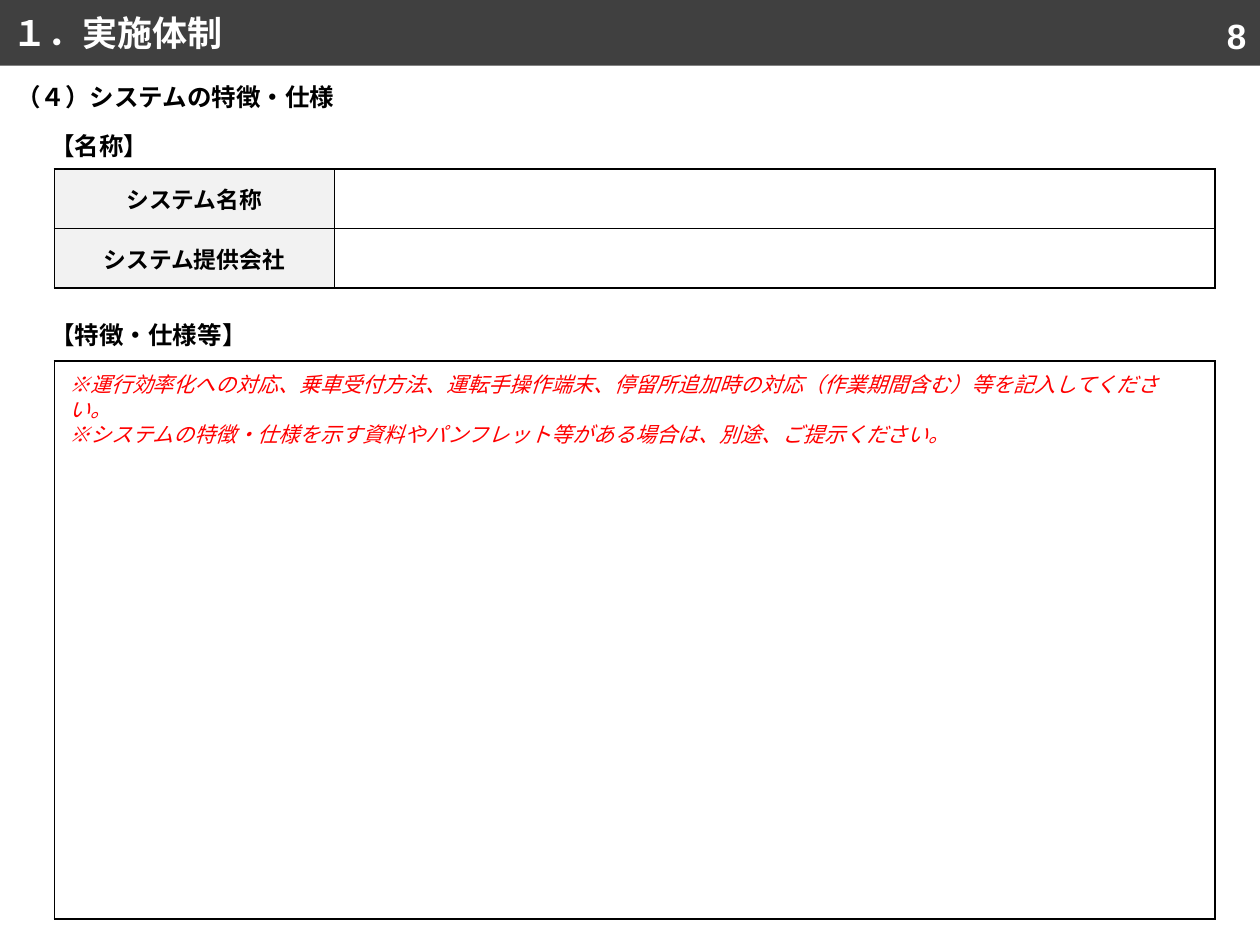
from lxml.etree import SubElement
from pptx import Presentation
from pptx.dml.color import RGBColor
from pptx.enum.text import MSO_ANCHOR as Anchor, MSO_AUTO_SIZE as AutoSize, PP_ALIGN as Align
from pptx.oxml import parse_xml
from pptx.oxml.ns import nsdecls, qn
from pptx.util import Pt

COLORS = {"bar": "404040", "label": "F2F2F2", "white": "FFFFFF",
          "black": "000000", "note": "FF0000"}
GOTHIC = "Noto Sans CJK JP"


def color(name):
    return RGBColor.from_string(COLORS[name])


def write(frame, text, size=14, font="Arial", ink="black", bold=False, italic=False,
          align=Align.LEFT):
    for index, line in enumerate(text.split("\n")):
        para = frame.paragraphs[0] if index == 0 else frame.add_paragraph()
        para.alignment = align
        span = para.add_run()
        span.text = line
        span.font.name, span.font.size = font, Pt(size)
        span.font.bold, span.font.italic = bold, italic
        span.font.color.rgb = color(ink)
        SubElement(span.font._element, qn("a:ea"), typeface=font)


class Page:
    """Draws the elements of one slide in a shared style; lengths are points."""

    def __init__(self, deck):
        self.slide = deck.slides.add_slide(deck.slide_layouts[5])

    def title_bar(self, text, width, height):
        title = self.slide.shapes.title
        title.left, title.top, title.width, title.height = 0, 0, Pt(width), Pt(height)
        title.fill.solid()
        title.fill.fore_color.rgb = color("bar")
        frame = title.text_frame
        frame.auto_size = AutoSize.NONE
        frame.vertical_anchor = Anchor.MIDDLE
        write(frame, text, size=20, font=GOTHIC, ink="white", bold=True)

    def text(self, text, left, top, width, height, **style):
        box = self.slide.shapes.add_textbox(Pt(left), Pt(top), Pt(width), Pt(height))
        box.text_frame.word_wrap = True
        write(box.text_frame, text, **style)

    def heading(self, text, left, top):
        self.text(text, left, top, 406.8, 24.5, bold=True)

    def table(self, rows, left, top, widths, row_height):
        frame = self.slide.shapes.add_table(
            len(rows), len(widths), Pt(left), Pt(top),
            Pt(sum(widths)), Pt(row_height * len(rows)))
        table = frame.table
        table.first_row = table.horz_banding = False
        for column, width in zip(table.columns, widths):
            column.width = Pt(width)
        for row, values in zip(table.rows, rows):
            row.height = Pt(row_height)
            for cell, value in zip(row.cells, values):
                self.cell(cell, value)

    def cell(self, cell, text):
        cell.fill.solid()
        cell.fill.fore_color.rgb = color("label" if text else "white")
        if text:
            cell.vertical_anchor = Anchor.MIDDLE
            cell.margin_left = cell.margin_right = Pt(4.3)
            cell.margin_top = cell.margin_bottom = 0
            write(cell.text_frame, text, size=13, font=GOTHIC, bold=True,
                  align=Align.CENTER)
        properties = cell._tc.get_or_add_tcPr()
        for index, side in enumerate("LRTB"):
            properties.insert(index, parse_xml(
                f'<a:ln{side} w="{Pt(1)}" {nsdecls("a")}><a:solidFill>'
                f'<a:srgbClr val="{COLORS["black"]}"/></a:solidFill></a:ln{side}>'))


def main():
    deck = Presentation()
    deck.slide_width, deck.slide_height = Pt(720), Pt(540)
    page = Page(deck)
    page.title_bar("１．実施体制", 720, 37.5)
    page.text("8", 543.6, 5, 175.7, 27.4, size=20, ink="white", bold=True,
              align=Align.RIGHT)
    page.heading("（４）システムの特徴・仕様", 2.2, 43.2)
    page.heading("【名称】", 21.6, 71.3)
    page.table([["システム名称", ""], ["システム提供会社", ""]],
               31, 96.7, [160, 503.3], 34)
    page.heading("【特徴・仕様等】", 21.6, 179.3)
    page.table([[""]], 31, 206.4, [663.3], 318.8)
    page.text("※運行効率化への対応、乗車受付方法、運転手操作端末、停留所追加時の対応"
              "（作業期間含む）等を記入してください。\n"
              "※システムの特徴・仕様を示す資料やパンフレット等がある場合は、別途、ご提示ください。",
              32.4, 208.8, 641.5, 36, size=12, ink="note", italic=True)
    deck.save("out.pptx")


if __name__ == "__main__":
    main()
